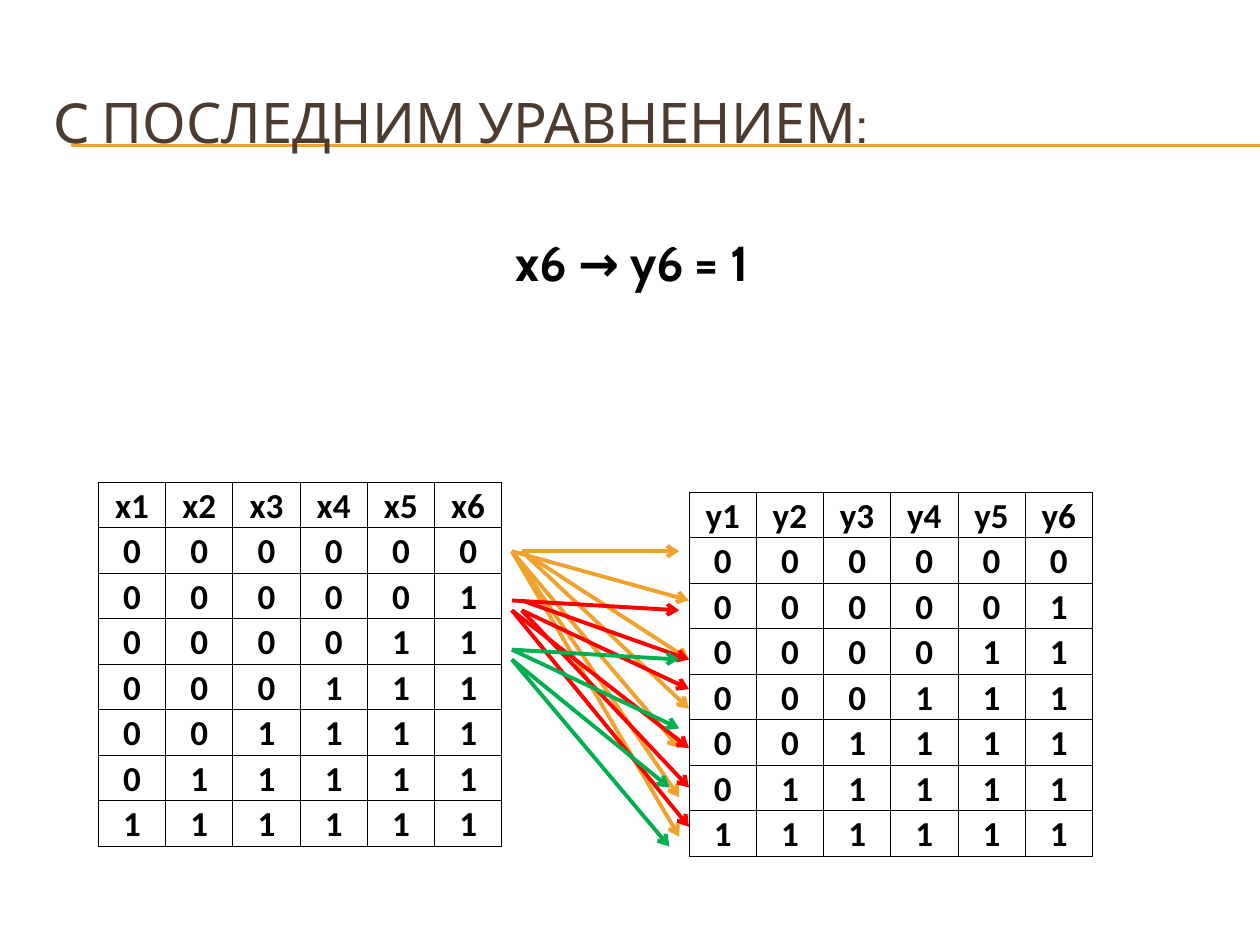
from typing import NamedTuple

from pptx import Presentation
from pptx.dml.color import RGBColor
from pptx.enum.shapes import MSO_CONNECTOR as Connector
from pptx.enum.text import MSO_ANCHOR as Anchor, MSO_AUTO_SIZE as AutoSize, PP_ALIGN as Align
from pptx.oxml import parse_xml
from pptx.oxml.ns import nsdecls
from pptx.oxml.xmlchemy import OxmlElement
from pptx.slide import Slide
from pptx.text.text import TextFrame
from pptx.util import Emu, Inches, Pt

ORANGE = RGBColor(0xF0, 0xA2, 0x2E)
RED = RGBColor(0xFF, 0x00, 0x00)
GREEN = RGBColor(0x00, 0xB0, 0x50)
BROWN = RGBColor(0x4E, 0x3B, 0x30)
BLACK = RGBColor(0x00, 0x00, 0x00)

SLIDE_WIDTH, SLIDE_HEIGHT = Inches(10), Inches(7.5)
GRID_COLUMNS = 128
VARIABLES = 6


class TruthTable(NamedTuple):
    variable: str
    column: int
    row: int


class Implication(NamedTuple):
    color: RGBColor
    arrows: tuple[tuple[int, int, int, int], ...]


TABLES = (TruthTable("x", 10, 49), TruthTable("y", 70, 50))

IMPLICATIONS = (
    Implication(ORANGE, (
        (53, 56, 69, 56), (52, 56, 70, 61), (53, 56, 70, 67), (53, 56, 70, 72),
        (52, 56, 69, 76), (52, 56, 69, 81), (52, 56, 69, 85),
    )),
    Implication(RED, (
        (52, 61, 69, 62), (53, 61, 70, 67), (53, 62, 70, 70),
        (52, 62, 70, 76), (53, 62, 70, 80), (52, 62, 70, 84),
    )),
    Implication(GREEN, (
        (52, 66, 69, 67), (52, 66, 69, 74), (52, 67, 68, 80), (52, 67, 68, 86),
    )),
)


def grid(steps: float) -> Emu:
    return Emu(round(SLIDE_WIDTH * steps / GRID_COLUMNS))


def style_text(frame: TextFrame, font: str, size: int, color: RGBColor,
               bold: bool, align: Align) -> None:
    for paragraph in frame.paragraphs:
        paragraph.alignment = align
        for run in paragraph.runs:
            run.font.name = font
            run.font.size = Pt(size)
            run.font.bold = bold
            run.font.color.rgb = color


def draw_line(slide: Slide, start: tuple[int, int], end: tuple[int, int],
              color: RGBColor, width: float, arrow: bool = False) -> None:
    line = slide.shapes.add_connector(Connector.STRAIGHT, *start, *end)
    line.line.color.rgb = color
    line.line.width = Pt(width)
    if arrow:
        head = OxmlElement("a:tailEnd")
        head.set("type", "arrow")
        line.line._get_or_add_ln().append(head)
    line._element.spPr.append(OxmlElement("a:effectLst"))


def border_cell(cell) -> None:
    properties = cell._tc.get_or_add_tcPr()
    for side in "LRTB":
        properties.append(parse_xml(
            f'<a:ln{side} {nsdecls("a")} w="{Pt(0.5)}"><a:solidFill>'
            f'<a:srgbClr val="{BLACK}"/></a:solidFill></a:ln{side}>'
        ))


def draw_table(slide: Slide, spec_table: TruthTable) -> None:
    header = [f"{spec_table.variable}{i}" for i in range(1, VARIABLES + 1)]
    values = ["0" * (VARIABLES - ones) + "1" * ones for ones in range(VARIABLES + 1)]
    rows = [header, *values]
    table = slide.shapes.add_table(
        len(rows), VARIABLES, grid(spec_table.column), grid(spec_table.row),
        grid(41), grid(37),
    ).table
    table.first_row = table.horz_banding = False
    for r, row in enumerate(rows):
        for c, value in enumerate(row):
            cell = table.cell(r, c)
            cell.text_frame.text = value
            style_text(cell.text_frame, "Calibri", 20, BLACK, True, Align.CENTER)
            cell.vertical_anchor = Anchor.BOTTOM
            cell.margin_left = cell.margin_right = cell.margin_top = Inches(0.01)
            cell.margin_bottom = 0
            border_cell(cell)
            cell.fill.background()


def draw_title(slide: Slide) -> None:
    for height in (1.15, 1.16):
        draw_line(slide, (Inches(0.56), Inches(height)),
                  (SLIDE_WIDTH, Inches(height)), ORANGE, 0.75)
    title = slide.shapes.title
    title.left, title.top = Inches(0.33), Inches(0.5)
    title.width, title.height = Inches(9.5), Inches(0.92)
    frame = title.text_frame
    frame.text = "C ПОСЛЕДНИМ УРАВНЕНИЕМ:"
    frame.auto_size = AutoSize.NONE
    frame.vertical_anchor = Anchor.MIDDLE
    style_text(frame, "Cabin", 32, BROWN, False, Align.LEFT)
    slide.shapes._spTree.append(title._element)


def draw_equation(slide: Slide) -> None:
    equation = slide.shapes.add_textbox(grid(50), grid(23), grid(40), Inches(0.57))
    frame = equation.text_frame
    frame.word_wrap = True
    frame.auto_size = AutoSize.SHAPE_TO_FIT_TEXT
    frame.text = " x6 → y6 = 1"
    style_text(frame, "Cabin", 28, BLACK, True, Align.LEFT)


def main() -> None:
    deck = Presentation()
    deck.slide_width, deck.slide_height = SLIDE_WIDTH, SLIDE_HEIGHT
    slide = deck.slides.add_slide(deck.slide_layouts.get_by_name("Title Only"))
    draw_title(slide)
    for table in TABLES:
        draw_table(slide, table)
    draw_equation(slide)
    for implication in IMPLICATIONS:
        for x1, y1, x2, y2 in implication.arrows:
            draw_line(slide, (grid(x1), grid(y1)), (grid(x2), grid(y2)),
                      implication.color, 2.25, arrow=True)
    deck.save("out.pptx")


if __name__ == "__main__":
    main()
